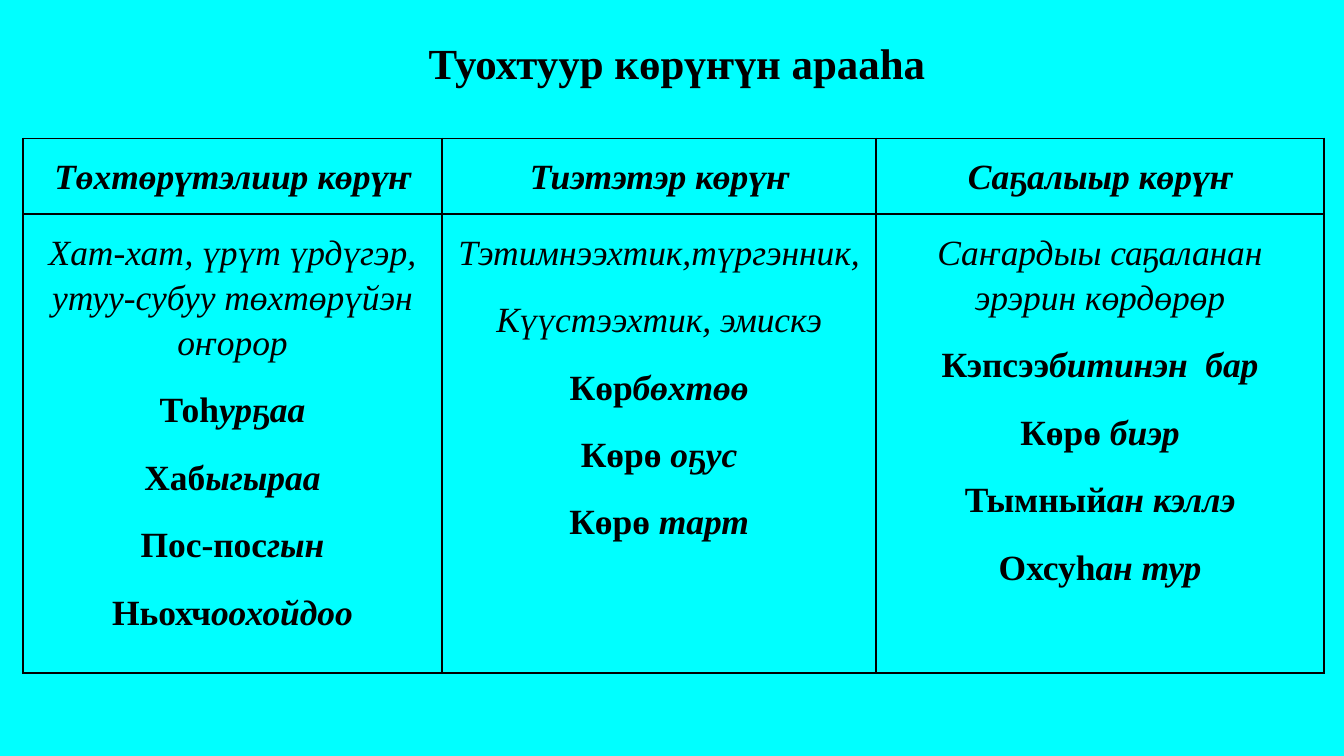
from dataclasses import dataclass

from lxml import etree
from pptx import Presentation
from pptx import util as u
from pptx.dml.color import RGBColor
from pptx.enum import text
from pptx.oxml.ns import qn


@dataclass(frozen=True)
class Theme:
    font: str = "Times New Roman"
    ink: str = "000000"
    paper: str = "00FFFF"
    title: int = 23
    body: int = 19
    gap: int = 12
    leading: float = 1.15
    border: int = 1


THEME = Theme()
WIDTH = u.Inches(10)
HEIGHT = WIDTH * 9 // 16
COLS = (3.12, 3.23, 3.33)
ROWS = (0.41, 3.38)

TITLE = "Туохтуур көрүҥүн арааһа"
COLUMNS = [
    ("Төхтөрүтэлиир көрүҥ",
     ["Хат-хат, үрүт үрдүгэр, утуу-субуу төхтөрүйэн оҥорор"],
     [("Тоһ", "урҕаа"), ("Хаб", "ыгыраа"), ("Пос-пос", "гын"),
      ("Ньохч", "оохойдоо")]),
    ("Тиэтэтэр көрүҥ",
     ["Тэтимнээхтик,түргэнник,", "Күүстээхтик, эмискэ"],
     [("Көр", "бөхтөө"), ("Көрө ", "оҕус"), ("Көрө ", "тарт")]),
    ("Саҕалыыр көрүҥ",
     ["Саҥардыы саҕаланан эрэрин көрдөрөр"],
     [("Кэпсээ", "битинэн  бар"), ("Көрө ", "биэр"),
      ("Тымный", "ан кэллэ"), ("Охсуһ", "ан тур")]),
]


def style_run(r, size, bold, italic=False):
    r.font.name = THEME.font
    r.font.size = u.Pt(size)
    r.font.bold = bold
    r.font.italic = italic
    r.font.color.rgb = RGBColor.from_string(THEME.ink)


def add_title(s):
    sp = s.shapes.add_textbox(u.Inches(3.09), u.Inches(0.17),
                              u.Inches(3.99), u.Inches(0.56))
    tf = sp.text_frame
    tf.word_wrap = True
    tf.margin_left = tf.margin_right = u.Inches(0.1)
    tf.margin_top = tf.margin_bottom = u.Inches(0.1)
    tf.text = TITLE
    style_run(tf.paragraphs[0].runs[0], THEME.title, bold=True)


def style_cell(cell):
    cell.margin_left = cell.margin_right = u.Inches(0.07)
    cell.margin_top = cell.margin_bottom = u.Inches(0.1)
    tcPr = cell._tc.get_or_add_tcPr()
    for side in ("lnL", "lnR", "lnT", "lnB"):
        ln = etree.SubElement(tcPr, qn(f"a:{side}"), w=str(u.Pt(THEME.border)))
        fill = etree.SubElement(ln, qn("a:solidFill"))
        etree.SubElement(fill, qn("a:srgbClr"), val=THEME.ink)
    cell.fill.background()


def fill_cell(cell, paragraphs):
    style_cell(cell)
    tf = cell.text_frame
    for i, runs in enumerate(paragraphs):
        p = tf.add_paragraph() if i else tf.paragraphs[0]
        p.alignment = text.PP_ALIGN.CENTER
        p.line_spacing = THEME.leading
        p.space_before = u.Pt(THEME.gap if i else 0)
        for words, bold, italic in runs:
            r = p.add_run()
            r.text = words
            style_run(r, THEME.body, bold, italic)


def add_aspect_table(s):
    frame = s.shapes.add_table(len(ROWS), len(COLS), u.Inches(0.17),
                               u.Inches(1.03), u.Inches(sum(COLS)),
                               u.Inches(sum(ROWS)))
    table = frame.table
    table.first_row = table.horz_banding = False
    for row, height in zip(table.rows, ROWS):
        row.height = u.Inches(height)
    for c, (heading, meanings, examples) in enumerate(COLUMNS):
        table.columns[c].width = u.Inches(COLS[c])
        fill_cell(table.cell(0, c), [[(heading, True, True)]])
        body = [[(meaning, False, True)] for meaning in meanings]
        body += [[(stem, True, False), (ending, True, True)]
                 for stem, ending in examples]
        fill_cell(table.cell(1, c), body)


def main():
    prs = Presentation()
    prs.slide_width, prs.slide_height = WIDTH, HEIGHT
    s = prs.slides.add_slide(prs.slide_layouts[6])
    s.background.fill.solid()
    s.background.fill.fore_color.rgb = RGBColor.from_string(THEME.paper)
    add_title(s)
    add_aspect_table(s)
    prs.save("out.pptx")


if __name__ == "__main__":
    main()
